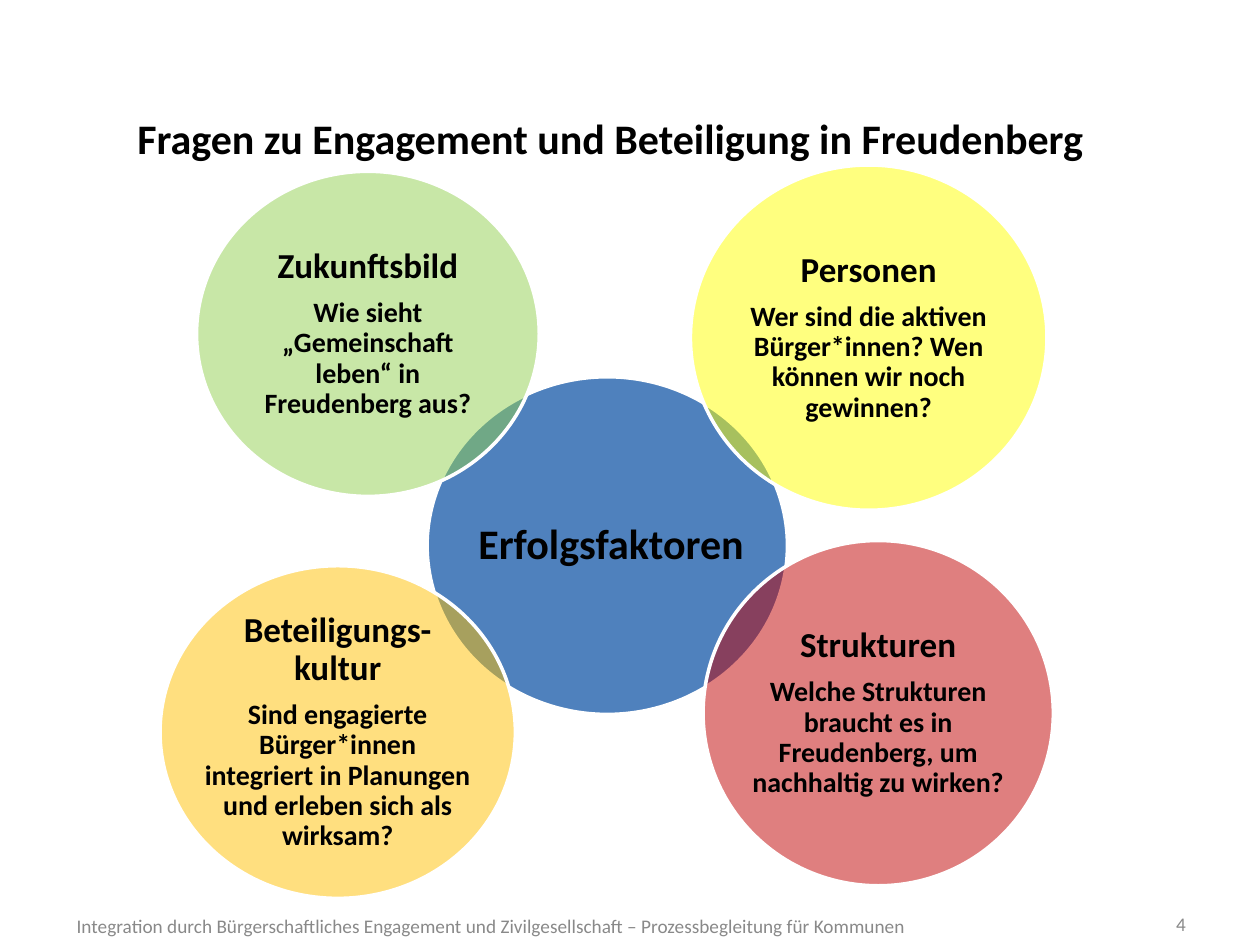
from lxml import etree
from pptx import Presentation
from pptx.dml.color import RGBColor
from pptx.enum.shapes import MSO_SHAPE
from pptx.enum.text import MSO_ANCHOR, MSO_AUTO_SIZE, PP_ALIGN
from pptx.oxml.ns import qn
from pptx.util import Inches, Pt

OVAL = MSO_SHAPE.OVAL
TOP, MIDDLE = MSO_ANCHOR.TOP, MSO_ANCHOR.MIDDLE
LEFT, CENTER, RIGHT = PP_ALIGN.LEFT, PP_ALIGN.CENTER, PP_ALIGN.RIGHT
FONT = "Calibri"
COLORS = {
    "text": "000000",
    "footer": "898989",
    "outline": "FFFFFF",
    "center": "4F81BD",
    "vision": "92D050",
    "people": "FFFF00",
    "culture": "FFC000",
    "structures": "C00000",
}
TOPICS = [
    ("vision", (1.56, 1.36, 2.72, 2.58), 0.39, "Zukunftsbild",
     "Wie sieht „Gemeinschaft leben“ in Freudenberg aus?"),
    ("people", (5.48, 1.31, 2.83, 2.74), 0.4, "Personen",
     "Wer sind die aktiven Bürger*innen? Wen können wir noch gewinnen?"),
    ("culture", (1.27, 4.49, 2.82, 2.64), 0.35, "Beteiligungs-kultur",
     "Sind engagierte Bürger*innen integriert in Planungen und erleben sich als wirksam?"),
    ("structures", (5.58, 4.29, 2.78, 2.74), 0.35, "Strukturen",
     "Welche Strukturen braucht es in Freudenberg, um nachhaltig zu wirken?"),
]


def color(name):
    """Return the named colour."""
    return RGBColor.from_string(COLORS[name])


def inches(box):
    """Convert a box of numbers to lengths."""
    return [Inches(value) for value in box]


def style_paragraph(paragraph, size, bold=True, color_name="text", alignment=CENTER):
    """Align a paragraph and format its runs."""
    paragraph.alignment = alignment
    for run in paragraph.runs:
        run.font.name = FONT
        run.font.size = Pt(size)
        run.font.bold = bold
        run.font.color.rgb = color(color_name)


def add_text_box(slide, box, margin=0.0, anchor=MIDDLE):
    """Add a wrapping text box and return its text frame."""
    text_frame = slide.shapes.add_textbox(*inches(box)).text_frame
    text_frame.word_wrap = True
    text_frame.vertical_anchor = anchor
    text_frame.margin_left = text_frame.margin_right = Inches(margin)
    text_frame.margin_top = text_frame.margin_bottom = Inches(margin)
    return text_frame


def add_circle(slide, box, color_name, opacity=100):
    """Add an outlined oval with the given opacity in percent."""
    shape = slide.shapes.add_shape(OVAL, *inches(box))
    shape.shadow.inherit = False
    shape.fill.solid()
    shape.fill.fore_color.rgb = color(color_name)
    shape.line.color.rgb = color("outline")
    shape.line.width = Pt(2)
    fill_color = shape.fill._xPr.find(qn("a:solidFill"))[0]
    etree.SubElement(fill_color, qn("a:alpha")).set("val", str(opacity * 1000))


def add_title(slide, box):
    """Place and format the title."""
    title = slide.shapes.title
    title.left, title.top, title.width, title.height = inches(box)
    text_frame = title.text_frame
    text_frame.text = "Fragen zu Engagement und Beteiligung in Freudenberg"
    text_frame.auto_size = MSO_AUTO_SIZE.NONE
    text_frame.vertical_anchor = TOP
    style_paragraph(text_frame.paragraphs[0], 24)


def add_center(slide, box):
    """Add the central circle with its label."""
    add_circle(slide, box, "center")
    left, top, width, height = box
    text_frame = add_text_box(slide, (left + 0.07, top + 0.45, width - 0.08, height - 0.9), 0.03)
    text_frame.text = "Erfolgsfaktoren"
    text_frame.paragraphs[0].line_spacing = 0.9
    style_paragraph(text_frame.paragraphs[0], 24)


def add_topic(slide, box, color_name, margin, heading, question):
    """Add a translucent circle with a heading and a question."""
    add_circle(slide, box, color_name, 50)
    text_frame = add_text_box(slide, box, margin)
    text_frame.text = heading
    text_frame.add_paragraph().text = question
    for paragraph, size in zip(text_frame.paragraphs, (20, 16)):
        paragraph.line_spacing = 0.9
        style_paragraph(paragraph, size)
    text_frame.paragraphs[0].space_after = Pt(7)


def add_footer(slide, box, text, alignment):
    """Add one grey footer text."""
    text_frame = add_text_box(slide, box, 0.1)
    text_frame.margin_top = text_frame.margin_bottom = Inches(0.05)
    text_frame.text = text
    style_paragraph(text_frame.paragraphs[0], 11, False, "footer", alignment)


def main():
    """Build and save the slide."""
    presentation = Presentation()
    presentation.slide_width, presentation.slide_height = Inches(10), Inches(7.5)
    slide = presentation.slides.add_slide(presentation.slide_layouts[5])
    add_footer(slide, (0.51, 7.17, 8.58, 0.36),
               "Integration durch Bürgerschaftliches Engagement und Zivilgesellschaft"
               " – Prozessbegleitung für Kommunen", LEFT)
    add_footer(slide, (8.7, 7.13, 0.81, 0.4), "4", RIGHT)
    add_center(slide, (3.39, 2.99, 2.86, 2.68))
    add_title(slide, (0.44, 0.84, 8.81, 0.8))
    for color_name, box, margin, heading, question in TOPICS:
        add_topic(slide, box, color_name, margin, heading, question)
    presentation.save("out.pptx")


if __name__ == "__main__":
    main()
